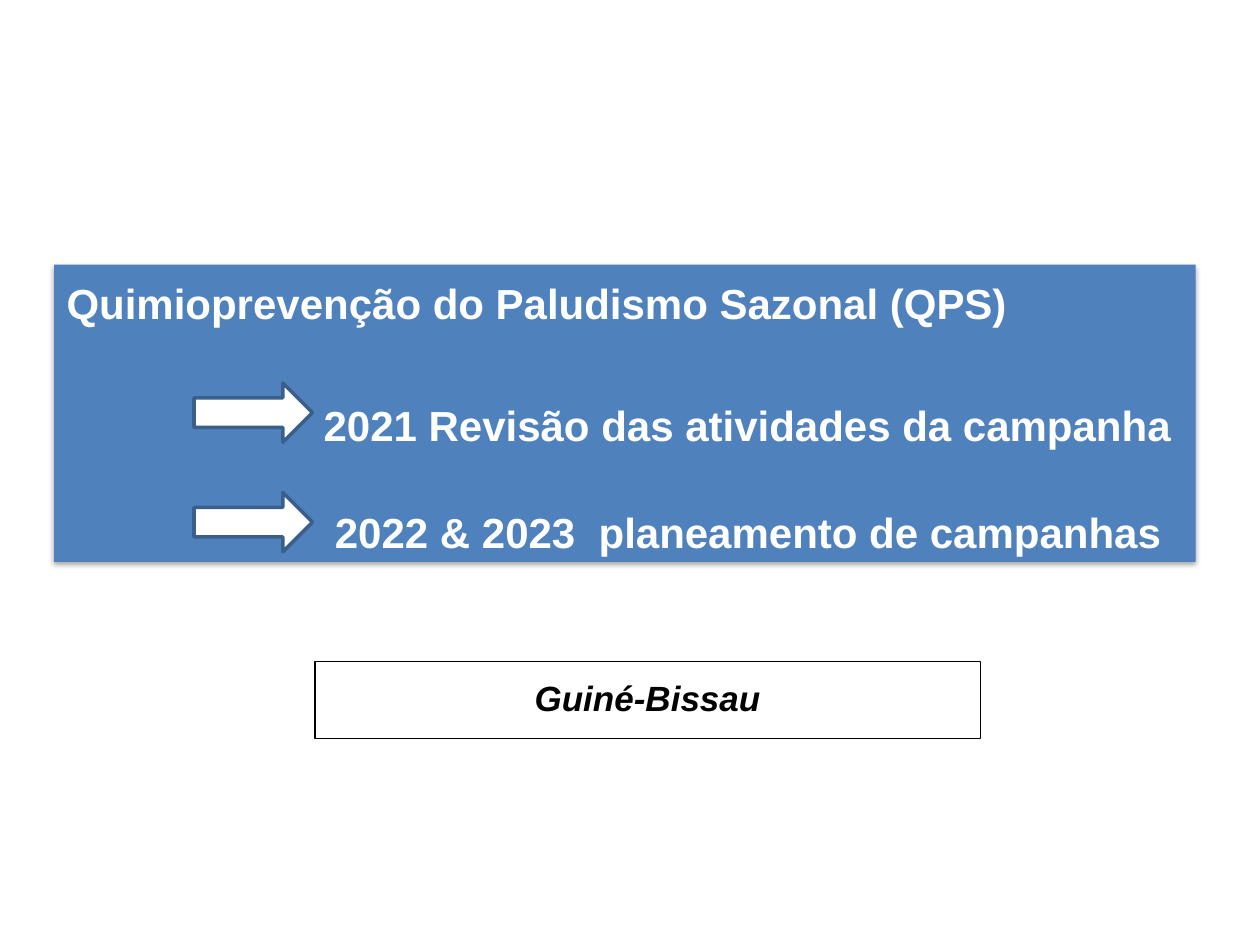
from dataclasses import dataclass

from lxml.etree import SubElement
from pptx import Presentation
from pptx.dml.color import RGBColor
from pptx.enum.shapes import MSO_SHAPE
from pptx.enum.text import MSO_ANCHOR, PP_ALIGN
from pptx.oxml.ns import qn
from pptx.util import Inches, Pt


@dataclass(frozen=True)
class Theme:
    font: str = "Arial"
    banner: RGBColor = RGBColor(0x4F, 0x81, 0xBD)
    arrow_line: RGBColor = RGBColor(0x3A, 0x5F, 0x8C)
    white: RGBColor = RGBColor(0xFF, 0xFF, 0xFF)
    black: RGBColor = RGBColor(0, 0, 0)
    title_size: int = 24
    country_size: int = 20


THEME = Theme()


def add_block(page, kind, box, fill, line=None, line_width=0):
    shape = page.shapes.add_shape(kind, *(Inches(length) for length in box))
    shape.shadow.inherit = False
    shape.fill.solid()
    shape.fill.fore_color.rgb = fill
    if line is None:
        shape.line.fill.background()
    else:
        shape.line.color.rgb = line
        shape.line.width = Pt(line_width)
    return shape


def set_frame(shape, anchor, top=0.1):
    frame = shape.text_frame
    frame.word_wrap = True
    frame.vertical_anchor = anchor
    frame.margin_left = frame.margin_right = frame.margin_bottom = Inches(0.1)
    frame.margin_top = Inches(top)
    return frame


def write(para, text, size, color, align, italic=False):
    para.text = text
    para.alignment = align
    para.line_spacing = 0.9
    for span in para.runs:
        span.font.name = THEME.font
        span.font.size = Pt(size)
        span.font.bold = True
        span.font.italic = italic
        span.font.color.rgb = color


def add_soft_shadow(shape):
    effects = shape._element.spPr.find(qn("a:effectLst"))
    shadow = SubElement(effects, qn("a:outerShdw"), blurRad=str(Pt(3.1)),
                        dist=str(Pt(1.8)), dir="5400000", rotWithShape="0")
    color = SubElement(shadow, qn("a:srgbClr"), val="000000")
    SubElement(color, qn("a:alpha"), val="35000")


def add_banner(page, box):
    left, top, _, _ = box
    banner = add_block(page, MSO_SHAPE.RECTANGLE, box, THEME.banner)
    add_soft_shadow(banner)

    # Title and indented topics: text, indent in inches, space before in points
    lines = [
        ("Quimioprevenção do Paludismo Sazonal (QPS)", 0, 0),
        ("2021 Revisão das atividades da campanha", 2.04, 43.7),
        ("2022 & 2023  planeamento de campanhas", 2.13, 35.2),
    ]
    frame = set_frame(banner, MSO_ANCHOR.TOP, top=0.15)
    for index, (text, indent, space) in enumerate(lines):
        para = frame.add_paragraph() if index else frame.paragraphs[0]
        write(para, text, THEME.title_size, THEME.white, PP_ALIGN.LEFT)
        para.space_before = Pt(space)
        para._p.get_or_add_pPr().set("marL", str(Inches(indent)))

    # One arrow in front of each topic
    for row in range(2):
        arrow_box = (left + 1.11, top + 0.94 + row * 0.87, 0.94, 0.47)
        add_block(page, MSO_SHAPE.RIGHT_ARROW, arrow_box, THEME.white,
                  THEME.arrow_line, 2)


def add_country(page, box):
    label = add_block(page, MSO_SHAPE.RECTANGLE, box, THEME.white,
                      THEME.black, 0.75)
    frame = set_frame(label, MSO_ANCHOR.MIDDLE)
    write(frame.paragraphs[0], "Guiné-Bissau", THEME.country_size,
          THEME.black, PP_ALIGN.CENTER, italic=True)


def main():
    deck = Presentation()
    deck.slide_width, deck.slide_height = Inches(10), Inches(7.5)
    page = deck.slides.add_slide(deck.slide_layouts[6])
    add_banner(page, (0.43, 2.1, 9.06, 2.36))
    add_country(page, (2.5, 5.25, 5.28, 0.61))
    deck.save("out.pptx")


if __name__ == "__main__":
    main()
